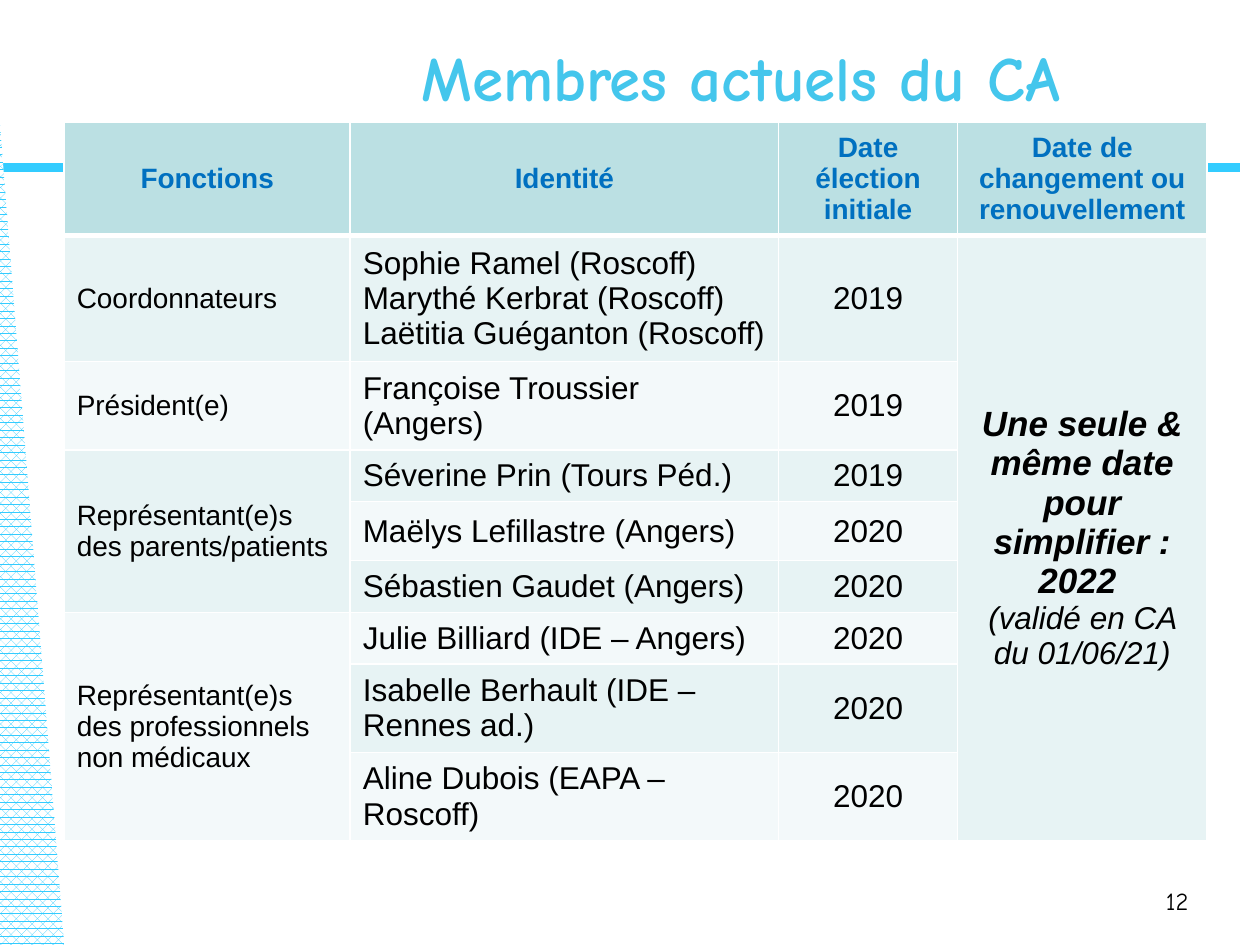
from lxml import etree
from pptx import Presentation, util as u
from pptx.dml.color import RGBColor
from pptx.enum import dml, shapes, text
from pptx.oxml import ns

GRID_COLUMNS, GRID_ROWS = 100, 75
UNIT = u.Inches(0.1)

WHITE = RGBColor(0xFF, 0xFF, 0xFF)
BLACK = RGBColor(0x00, 0x00, 0x00)
CYAN = RGBColor(0x33, 0xCC, 0xFF)
TITLE_BLUE = RGBColor(0x44, 0xC6, 0xEC)
HEADER_BLUE = RGBColor(0x00, 0x70, 0xC0)
HEADER_FILL = RGBColor(0xBB, 0xE0, 0xE3)
BANDS = (RGBColor(0xE7, 0xF3, 0xF4), RGBColor(0xF3, 0xF9, 0xFA))

COLUMN_WIDTHS = (22.7, 34, 14.2, 19.8)
ROW_HEIGHTS = (9, 10, 7, 4.1, 4.7, 4.1, 4.1, 7, 7)
HEADINGS = ("Fonctions", "Identité", "Date élection initiale",
            "Date de changement ou renouvellement")
FUNCTIONS = (
    ("Coordonnateurs", [
        (("Sophie Ramel (Roscoff)", "Marythé Kerbrat (Roscoff)",
          "Laëtitia Guéganton (Roscoff)"), "2019")]),
    ("Président(e)", [(("Françoise Troussier (Angers)",), "2019")]),
    ("Représentant(e)s des parents/patients", [
        (("Séverine Prin (Tours Péd.)",), "2019"),
        (("Maëlys Lefillastre (Angers)",), "2020"),
        (("Sébastien Gaudet (Angers)",), "2020")]),
    ("Représentant(e)s des professionnels non médicaux", [
        (("Julie Billiard (IDE – Angers)",), "2020"),
        (("Isabelle Berhault (IDE – Rennes ad.)",), "2020"),
        (("Aline Dubois (EAPA – Roscoff)",), "2020")]),
)
RENEWAL = ("Une seule & même date pour simplifier :", "2022 ")
RENEWAL_NOTE = "(validé en CA du 01/06/21)"


def grid(*lengths):
    """Turn grid columns and rows into slide lengths."""
    return [u.Emu(round(length * UNIT)) for length in lengths]


def write(frame, *lines, size=18, font="Arial", color=BLACK, bold=False,
          italic=False, align=text.PP_ALIGN.LEFT):
    """Add one formatted paragraph per line to a text frame."""
    for line in lines:
        paragraph = frame.paragraphs[0] if not frame.text else frame.add_paragraph()
        paragraph.alignment = align
        run = paragraph.add_run()
        run.text = line
        run.font.size = u.Pt(size)
        run.font.name = font
        run.font.color.rgb = color
        run.font.bold = bold
        run.font.italic = italic


def add_label(slide, box, label, anchor=text.MSO_ANCHOR.TOP, **style):
    """Place a wrapped text box in the given box."""
    frame = slide.shapes.add_textbox(*grid(*box)).text_frame
    frame.word_wrap = True
    frame.vertical_anchor = anchor
    write(frame, label, **style)


def add_backdrop(slide, box):
    """Draw the horizontal rule and the patterned wedge on the left."""
    left, top, width, height = box
    rule_y = top + 13.3
    rule = slide.shapes.add_connector(
        shapes.MSO_CONNECTOR.STRAIGHT,
        *grid(left, rule_y, left + width - 1.6, rule_y))
    rule.line.color.rgb = CYAN
    rule.line.width = u.Pt(5.25)
    etree.SubElement(rule._element.spPr, ns.qn("a:effectLst"))

    wedge = slide.shapes.add_shape(
        shapes.MSO_SHAPE.RIGHT_TRIANGLE, *grid(left, top + 9.9, 5.1, height - 9.9))
    wedge.shadow.inherit = False
    wedge.fill.patterned()
    wedge.fill.pattern = dml.MSO_PATTERN.PERCENT_60
    wedge.fill.fore_color.rgb = CYAN
    wedge.fill.back_color.rgb = WHITE
    wedge.line.fill.background()


def style_cell(cell, fill, bottom=1, top=1):
    """Give a cell its white borders, fill and middle anchor."""
    properties = cell._tc.get_or_add_tcPr()
    for side, points in (("L", 1), ("R", 1), ("T", top), ("B", bottom)):
        border = etree.SubElement(properties, ns.qn(f"a:ln{side}"), w=str(u.Pt(points)))
        solid = etree.SubElement(border, ns.qn("a:solidFill"))
        etree.SubElement(solid, ns.qn("a:srgbClr"), val=str(WHITE))
    cell.fill.solid()
    cell.fill.fore_color.rgb = fill
    cell.vertical_anchor = text.MSO_ANCHOR.MIDDLE


def add_members(slide, box):
    """Build the table of members, grouped by function."""
    members = slide.shapes.add_table(
        len(ROW_HEIGHTS), len(COLUMN_WIDTHS), *grid(*box)).table
    for column, width in zip(members.columns, grid(*COLUMN_WIDTHS)):
        column.width = width
    for index, height in enumerate(grid(*ROW_HEIGHTS)):
        members.rows[index].height = height
        fill = BANDS[(index - 1) % 2] if index else HEADER_FILL
        for cell in members.rows[index].cells:
            style_cell(cell, fill, bottom=1 if index else 3, top=3 if index == 1 else 1)

    center = text.PP_ALIGN.CENTER
    for column, heading in enumerate(HEADINGS):
        write(members.cell(0, column).text_frame, heading, size=16,
              color=HEADER_BLUE, bold=True, align=center)

    row = 1
    for function, holders in FUNCTIONS:
        function_cell = members.cell(row, 0)
        if len(holders) > 1:
            function_cell.merge(members.cell(row + len(holders) - 1, 0))
        write(function_cell.text_frame, function, size=16)
        for names, elected in holders:
            write(members.cell(row, 1).text_frame, *names)
            write(members.cell(row, 2).text_frame, elected, align=center)
            row += 1

    renewal_cell = members.cell(1, 3)
    renewal_cell.merge(members.cell(len(ROW_HEIGHTS) - 1, 3))
    write(renewal_cell.text_frame, *RENEWAL, size=20, bold=True, italic=True, align=center)
    write(renewal_cell.text_frame, RENEWAL_NOTE, italic=True, align=center)


def main():
    """Build and save the slide."""
    deck = Presentation()
    deck.slide_width, deck.slide_height = grid(GRID_COLUMNS, GRID_ROWS)
    slide = deck.slides.add_slide(deck.slide_layouts[6])
    add_backdrop(slide, (0, 0, GRID_COLUMNS, GRID_ROWS))
    add_label(slide, (21.7, 2.1, 74.2, 7.9), "Membres actuels du CA",
              anchor=text.MSO_ANCHOR.MIDDLE, size=36, font="Comic Neue",
              color=TITLE_BLUE, bold=True, align=text.PP_ALIGN.CENTER)
    add_members(slide, (5.1, 9.7, sum(COLUMN_WIDTHS), sum(ROW_HEIGHTS)))
    add_label(slide, (72, 69.8, 23.3, 5.2), "12", size=14, font="Comic Neue",
              align=text.PP_ALIGN.RIGHT)
    deck.save("out.pptx")


if __name__ == "__main__":
    main()
